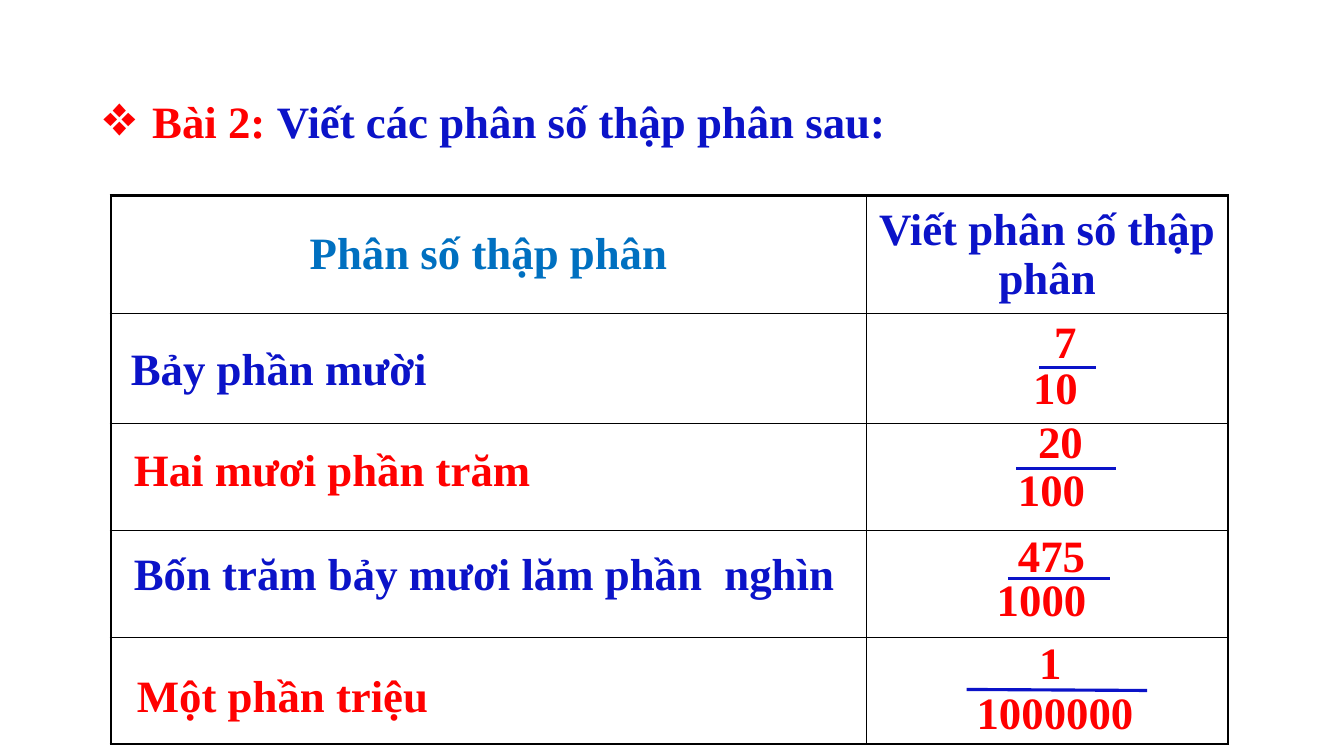
import pptx
import pptx.dml.color
import pptx.enum.shapes
import pptx.enum.text
import pptx.oxml
import pptx.oxml.ns
import pptx.util

Pt = pptx.util.Pt
RED = pptx.dml.color.RGBColor(0xFF, 0x00, 0x00)
NAVY = pptx.dml.color.RGBColor(0x0B, 0x13, 0xC8)
SKY = pptx.dml.color.RGBColor(0x00, 0x70, 0xC0)
BLACK = pptx.dml.color.RGBColor(0x00, 0x00, 0x00)

FONT_FORMAT = {"name": "Times New Roman", "size": Pt(32), "bold": True}
CELL_FORMAT = {
    "margin_left": Pt(8.64),
    "margin_right": Pt(8.64),
    "margin_top": Pt(3.6),
    "margin_bottom": Pt(3.6),
    "vertical_anchor": pptx.enum.text.MSO_ANCHOR.MIDDLE,
}
TEXT_HEIGHT = 46
DIGIT_WIDTH = 16
THIN, THICK = 1, 2.25

COLUMN_WIDTHS = [539.64, 258.3]
ROW_HEIGHTS = [84.24, 78.48, 76.32, 76.32, 76.32]
HEADERS = [("Phân số thập phân", SKY), ("Viết phân số thập phân", NAVY)]

# numerator (text, left, top), denominator (text, left, top), bar (x1, y1, x2, y2)
FRACTIONS = [
    (("7", 745.92, 220.32), ("10", 730.8, 253.44), (742.32, 262.8, 782.64, 262.8)),
    (("20", 734.4, 292.32), ("100", 720, 326.16), (725.76, 334.8, 797.04, 334.8)),
    (("475", 720, 373.68), ("1000", 704.88, 404.64), (720, 413.28, 792.72, 413.28)),
    (("1", 735.12, 450), ("1000000", 690.5, 485.28), (690.48, 492.48, 819.36, 493.2)),
]
READINGS = [
    ("Bảy phần mười", 86.4, 239.76, NAVY),
    ("Hai mươi phần trăm", 88.56, 311.76, RED),
    ("Bốn trăm bảy mươi lăm phần  nghìn", 88.56, 385.92, NAVY),
    ("Một phần triệu", 90.72, 473.04, RED),
]


def apply_format(target, values):
    for name, value in values.items():
        setattr(target, name, value)


def add_run(paragraph, text, color):
    run = paragraph.add_run()
    run.text = text
    apply_format(run.font, FONT_FORMAT)
    run.font.color.rgb = color


def add_xml(parent, tag, **attributes):
    element = pptx.oxml.parse_xml(f"<{tag} {pptx.oxml.ns.nsdecls('a')}/>")
    for name, value in attributes.items():
        element.set(name, str(value))
    parent.append(element)
    return element


def add_heading(slide):
    title = slide.shapes.title
    apply_format(title, {"left": Pt(65.52), "top": Pt(63.36),
                         "width": Pt(788.4), "height": Pt(TEXT_HEIGHT)})
    apply_format(title.text_frame, {
        "word_wrap": True,
        "auto_size": pptx.enum.text.MSO_AUTO_SIZE.NONE,
        "vertical_anchor": pptx.enum.text.MSO_ANCHOR.TOP,
    })
    paragraph = title.text_frame.paragraphs[0]
    paragraph.alignment = pptx.enum.text.PP_ALIGN.LEFT
    add_run(paragraph, "Bài 2: ", RED)
    add_run(paragraph, "Viết các phân số thập phân sau:", NAVY)
    properties = paragraph._p.get_or_add_pPr()
    apply_indent = {"marL": Pt(36), "indent": -Pt(36)}
    for name, value in apply_indent.items():
        properties.set(name, str(value))
    add_xml(properties, "a:buFont", typeface="Times New Roman")
    add_xml(properties, "a:buChar", char="❖")


def add_label(slide, text, left, top, width, color, wrap):
    box = slide.shapes.add_textbox(Pt(left), Pt(top), Pt(width), Pt(TEXT_HEIGHT))
    box.text_frame.word_wrap = wrap
    add_run(box.text_frame.paragraphs[0], text, color)


def add_fraction(slide, numerator, denominator, bar):
    for text, left, top in (numerator, denominator):
        width = DIGIT_WIDTH * (len(text) + 1)
        add_label(slide, text, left, top, width, RED, False)
    line = slide.shapes.add_connector(
        pptx.enum.shapes.MSO_CONNECTOR.STRAIGHT, *[Pt(value) for value in bar])
    line.line.color.rgb = NAVY
    line.line.width = Pt(THICK)
    add_xml(line._element.spPr, "a:effectLst")


def set_borders(cell, widths):
    properties = cell._tc.get_or_add_tcPr()
    for position, (side, width) in enumerate(widths.items()):
        border = add_xml(properties, f"a:ln{side}", w=Pt(width))
        fill = add_xml(border, "a:solidFill")
        add_xml(fill, "a:srgbClr", val=BLACK)
        properties.insert(position, border)


def add_fraction_table(slide):
    row_count, column_count = len(ROW_HEIGHTS), len(COLUMN_WIDTHS)
    table = slide.shapes.add_table(
        row_count, column_count, Pt(79.2), Pt(139.9),
        Pt(sum(COLUMN_WIDTHS)), Pt(sum(ROW_HEIGHTS))).table
    apply_format(table, {"first_row": False, "horz_banding": False})
    for column, width in zip(table.columns, COLUMN_WIDTHS):
        column.width = Pt(width)
    for row, height in zip(table.rows, ROW_HEIGHTS):
        row.height = Pt(height)
    for row in range(row_count):
        for column in range(column_count):
            cell = table.cell(row, column)
            apply_format(cell, CELL_FORMAT)
            cell.fill.background()
            set_borders(cell, {
                "L": THICK if column == 0 else THIN,
                "R": THICK if column == column_count - 1 else THIN,
                "T": THICK if row == 0 else THIN,
                "B": THICK if row == row_count - 1 else THIN,
            })
    for column, (text, color) in enumerate(HEADERS):
        paragraph = table.cell(0, column).text_frame.paragraphs[0]
        apply_format(paragraph, {"alignment": pptx.enum.text.PP_ALIGN.CENTER,
                                 "space_before": Pt(6.4)})
        add_run(paragraph, text, color)


def main():
    presentation = pptx.Presentation()
    apply_format(presentation, {"slide_width": Pt(960), "slide_height": Pt(540)})
    slide = presentation.slides.add_slide(presentation.slide_layouts[5])
    add_heading(slide)
    for fraction in FRACTIONS:
        add_fraction(slide, *fraction)
    add_fraction_table(slide)
    for text, left, top, color in READINGS:
        add_label(slide, text, left, top, 553.68, color, True)
    presentation.save("out.pptx")


if __name__ == "__main__":
    main()
